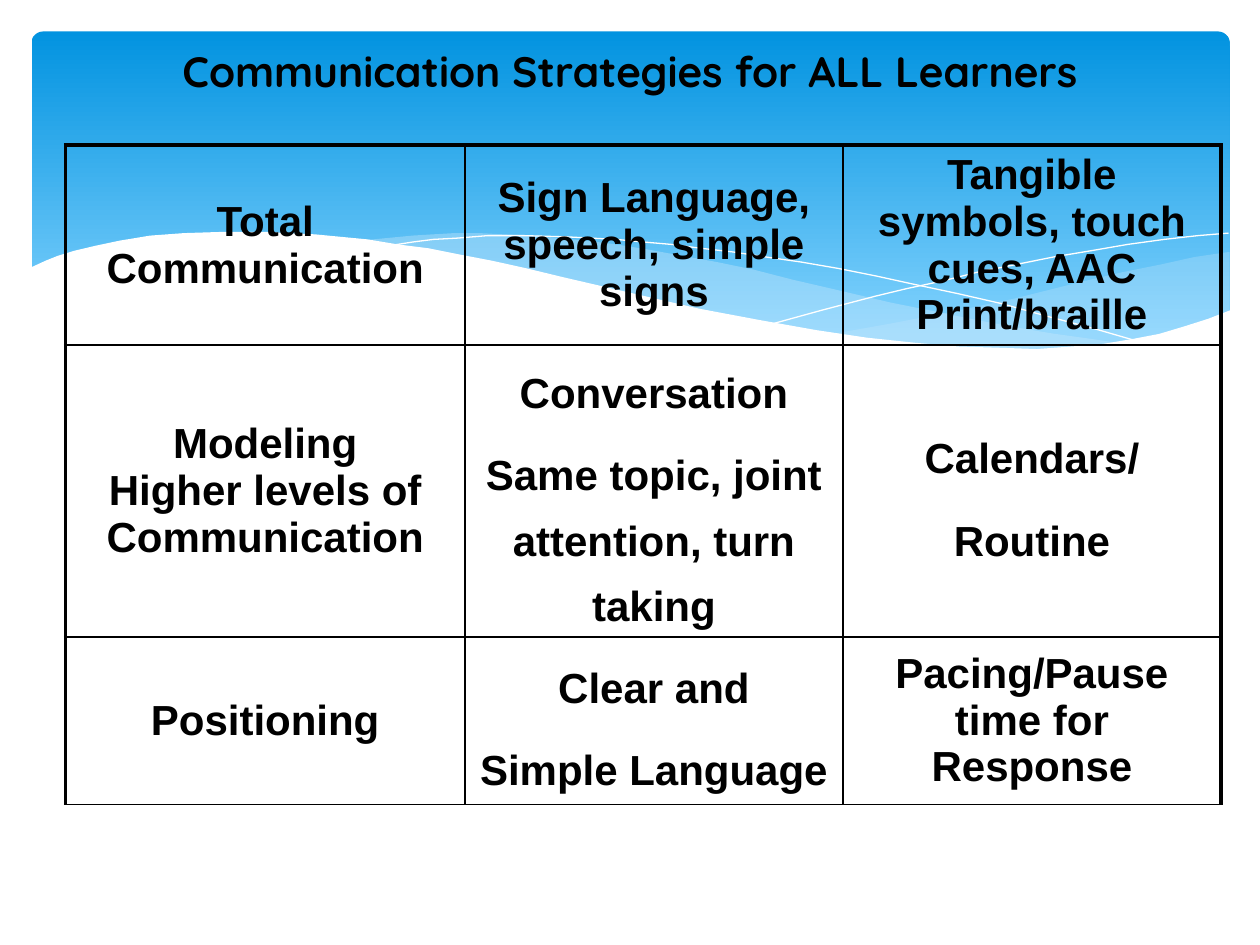
import pptx
import pptx.util
import pptx.dml.color
import pptx.enum.shapes
import pptx.enum.text
import pptx.oxml
import pptx.oxml.ns
from pptx.util import Inches

RGBColor = pptx.dml.color.RGBColor
BLACK = RGBColor(0x00, 0x00, 0x00)
WHITE = RGBColor(0xFF, 0xFF, 0xFF)
DEEP_BLUE = RGBColor(0x02, 0x93, 0xE0)
LIGHT_BLUE = RGBColor(0x83, 0xD3, 0xFE)
PALE_BLUE = RGBColor(0xC6, 0xE7, 0xFC)

RIGHT_WAVE = [
    (9.75, 2), (9.48, 2.04), (9.21, 2.1), (8.91, 2.16), (8.61, 2.23),
    (8.05, 2.37), (7.53, 2.48), (7.06, 2.57), (6.61, 2.65), (6.91, 2.69),
    (7.19, 2.72), (7.45, 2.75), (7.69, 2.77), (8.03, 2.78), (8.35, 2.77),
    (8.63, 2.75), (8.89, 2.72), (9.13, 2.67), (9.35, 2.62), (9.49, 2.57),
    (9.63, 2.52), (9.76, 2.47), (9.76, 2)]
MIDDLE_WAVE = [
    (8.93, 2.73), (8.66, 2.69), (8.37, 2.65), (8.07, 2.6), (7.75, 2.54),
    (7.41, 2.47), (7.06, 2.4), (6.68, 2.31), (6.29, 2.22), (5.98, 2.14),
    (5.69, 2.08), (5.41, 2.03), (5.14, 1.98), (4.89, 1.94), (4.65, 1.91),
    (4.42, 1.89), (4.2, 1.87), (3.99, 1.86), (3.8, 1.85), (3.61, 1.85),
    (3.28, 1.87), (2.86, 1.91), (3.23, 1.96), (3.62, 2.03), (4.04, 2.11),
    (4.49, 2.22), (4.91, 2.32), (5.3, 2.4), (5.66, 2.48), (6.01, 2.55),
    (6.34, 2.61), (6.65, 2.66), (6.95, 2.7), (7.22, 2.74), (7.48, 2.76),
    (7.73, 2.77), (7.96, 2.78), (8.28, 2.78), (8.57, 2.77), (8.76, 2.75)]
FALLING_CURVE = [
    (3.09, 1.95), (3.28, 1.92), (3.44, 1.9), (3.63, 1.89), (3.87, 1.87),
    (4.16, 1.87), (4.5, 1.88), (4.89, 1.9), (5.1, 1.92), (5.33, 1.94),
    (5.56, 1.97), (5.82, 2), (6.08, 2.04), (6.36, 2.08), (6.65, 2.13),
    (6.95, 2.19), (7.27, 2.26), (7.6, 2.33), (7.95, 2.41), (8.31, 2.51),
    (8.69, 2.61), (9.07, 2.72)]
RISING_CURVE = [
    (6.13, 2.57), (6.53, 2.46), (6.95, 2.35), (7.2, 2.29), (7.48, 2.23),
    (7.76, 2.16), (8.06, 2.1), (8.36, 2.04), (8.66, 1.99), (8.95, 1.94),
    (9.24, 1.9), (9.51, 1.87), (9.75, 1.85)]
WHITE_WAVE = [
    (9.77, 2.46), (9.59, 2.53), (9.4, 2.59), (9.2, 2.65), (8.99, 2.69),
    (8.75, 2.73), (8.5, 2.75), (8.23, 2.77), (7.93, 2.76), (7.61, 2.75),
    (7.26, 2.72), (6.88, 2.68), (6.48, 2.62), (6.03, 2.54), (5.55, 2.45),
    (5.03, 2.33), (4.47, 2.2), (4.18, 2.13), (3.91, 2.07), (3.65, 2.02),
    (3.4, 1.97), (3.16, 1.94), (2.92, 1.9), (2.71, 1.88), (2.5, 1.86),
    (2.3, 1.85), (2.11, 1.84), (1.77, 1.84), (1.46, 1.85), (1.19, 1.87),
    (0.95, 1.91), (0.76, 1.95), (0.59, 1.99), (0.46, 2.03), (0.36, 2.07),
    (0.23, 2.13), (0.23, 3.29), (9.77, 3.29)]

COLUMN_WIDTHS = [3.17, 3, 3]
ROW_HEIGHTS = [1.59, 2.31, 1.33]
STRATEGIES = [
    ["Total Communication", "Sign Language, speech, simple signs",
     "Tangible symbols, touch cues, AAC\nPrint/braille"],
    ["Modeling\nHigher levels of\nCommunication",
     "Conversation\nSame topic, joint attention, turn taking",
     "Calendars/\nRoutine"],
    ["Positioning", "Clear and\nSimple Language",
     "Pacing/Pause time for Response"],
]
SPACED_CELLS = {(1, 1), (1, 2), (2, 1)}


def add_outline(slide, points, closed):
    start, *rest = [(Inches(x), Inches(y)) for x, y in points]
    builder = slide.shapes.build_freeform(*start)
    builder.add_line_segments(rest, close=closed)
    outline = builder.convert_to_shape()
    outline.shadow.inherit = False
    return outline


def add_wave(slide, points, color, opacity=100):
    wave = add_outline(slide, points, True)
    wave.fill.solid()
    wave.fill.fore_color.rgb = color
    wave.line.fill.background()
    if opacity < 100:
        tint = wave._element.spPr.find(".//" + pptx.oxml.ns.qn("a:srgbClr"))
        alpha = pptx.oxml.parse_xml(
            f'<a:alpha {pptx.oxml.ns.nsdecls("a")} val="{opacity * 1000}"/>')
        tint.append(alpha)


def add_curve(slide, points):
    curve = add_outline(slide, points, False)
    curve.fill.background()
    curve.line.color.rgb = WHITE
    curve.line.width = pptx.util.Pt(0)


def add_banner(slide):
    banner = slide.shapes.add_shape(
        pptx.enum.shapes.MSO_SHAPE.ROUNDED_RECTANGLE,
        Inches(0.25), Inches(0.25), Inches(9.51), Inches(2.7))
    banner.adjustments[0] = 0.034
    banner.shadow.inherit = False
    banner.line.fill.background()
    banner.fill.gradient()
    banner.fill.gradient_angle = 270
    stops = zip(banner.fill.gradient_stops, [(0, DEEP_BLUE), (0.9, LIGHT_BLUE)])
    for stop, (position, color) in stops:
        stop.position = position
        stop.color.rgb = color


def format_runs(paragraph, font_name, size):
    paragraph.alignment = pptx.enum.text.PP_ALIGN.CENTER
    for run in paragraph.runs:
        run.font.name = font_name
        run.font.size = pptx.util.Pt(size)
        run.font.bold = True
        run.font.color.rgb = BLACK


def set_title(slide):
    title = slide.shapes.title
    slide.shapes._spTree.append(title._element)
    title.left, title.top = Inches(0.75), Inches(0.04)
    title.width, title.height = Inches(8.5), Inches(0.74)
    frame = title.text_frame
    frame.text = "Communication Strategies for ALL Learners"
    frame.auto_size = pptx.enum.text.MSO_AUTO_SIZE.NONE
    frame.vertical_anchor = pptx.enum.text.MSO_ANCHOR.BOTTOM
    frame.margin_bottom = Inches(0.02)
    format_runs(frame.paragraphs[0], "Quicksand", 24.3)


def set_borders(cell, widths):
    properties = cell._tc.get_or_add_tcPr()
    for side, width in widths.items():
        properties.append(pptx.oxml.parse_xml(
            f'<a:ln{side} {pptx.oxml.ns.nsdecls("a")} '
            f'w="{pptx.util.Pt(width)}"><a:solidFill>'
            f'<a:srgbClr val="{BLACK}"/></a:solidFill></a:ln{side}>'))


def fill_cell(cell, text, spaced):
    cell.fill.background()
    cell.vertical_anchor = pptx.enum.text.MSO_ANCHOR.MIDDLE
    cell.text_frame.text = text
    for paragraph in cell.text_frame.paragraphs:
        format_runs(paragraph, "Arial", 24)
        if spaced:
            paragraph.line_spacing = 1.4
            paragraph.space_before = pptx.util.Pt(9.6)


def add_strategy_table(slide):
    table = slide.shapes.add_table(
        len(ROW_HEIGHTS), len(COLUMN_WIDTHS), Inches(0.52), Inches(1.15),
        Inches(sum(COLUMN_WIDTHS)), Inches(sum(ROW_HEIGHTS))).table
    table.first_row = table.horz_banding = False
    for column, width in zip(table.columns, COLUMN_WIDTHS):
        column.width = Inches(width)
    last_column = len(COLUMN_WIDTHS) - 1
    for r, (height, texts) in enumerate(zip(ROW_HEIGHTS, STRATEGIES)):
        table.rows[r].height = Inches(height)
        for c, text in enumerate(texts):
            cell = table.cell(r, c)
            set_borders(cell, {"L": 2.25 if c == 0 else 1,
                               "R": 2.25 if c == last_column else 1,
                               "T": 2.25 if r == 0 else 1, "B": 1})
            fill_cell(cell, text, (r, c) in SPACED_CELLS)


def main():
    deck = pptx.Presentation()
    deck.slide_width, deck.slide_height = Inches(10), Inches(7.5)
    slide = deck.slides.add_slide(deck.slide_layouts[5])
    add_banner(slide)
    add_wave(slide, RIGHT_WAVE, PALE_BLUE, 29)
    add_wave(slide, MIDDLE_WAVE, PALE_BLUE, 40)
    add_curve(slide, FALLING_CURVE)
    add_curve(slide, RISING_CURVE)
    add_wave(slide, WHITE_WAVE, WHITE)
    set_title(slide)
    add_strategy_table(slide)
    deck.save("out.pptx")


if __name__ == "__main__":
    main()
